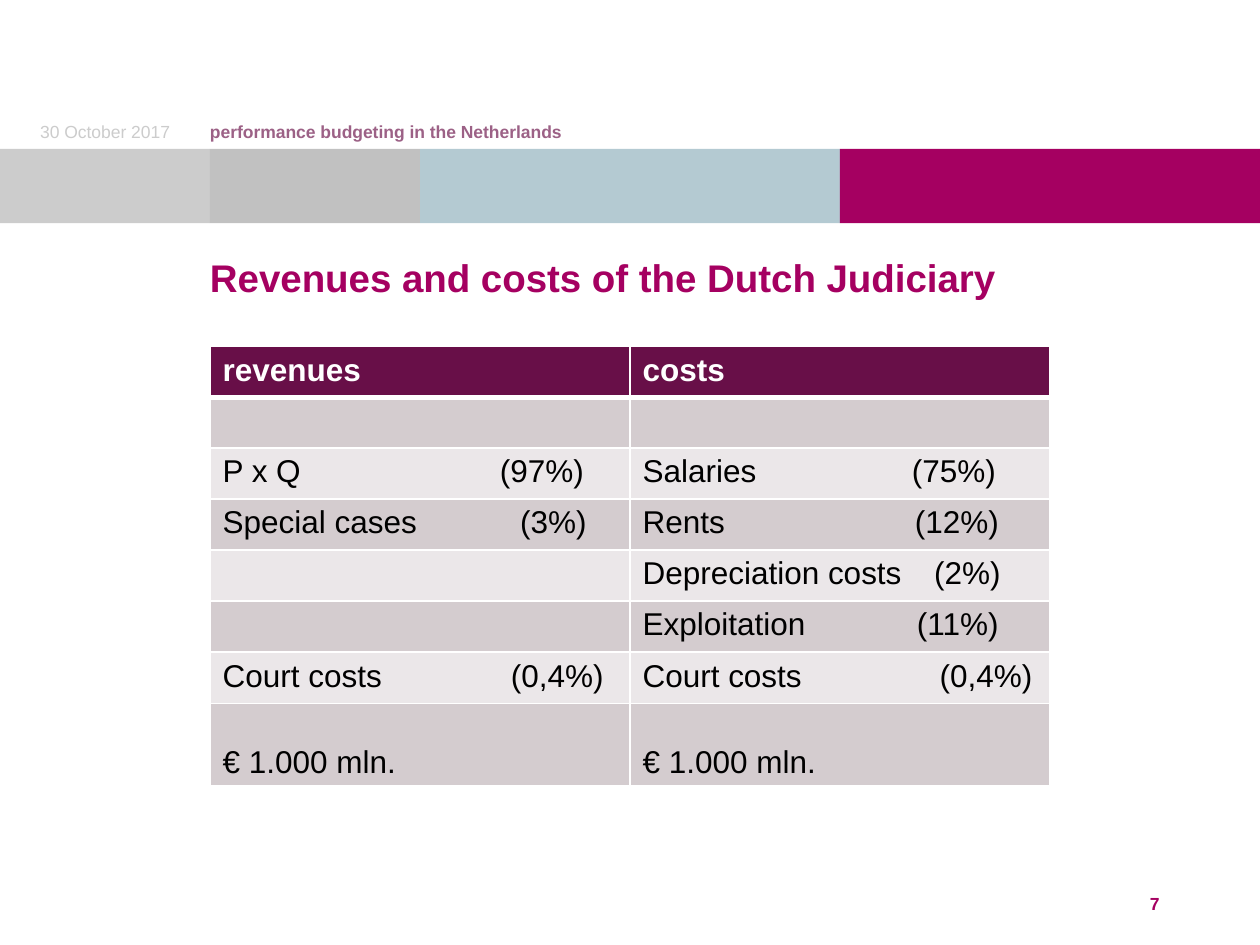
from lxml import etree
from pptx import Presentation
from pptx.dml.color import RGBColor
from pptx.enum.shapes import MSO_SHAPE
from pptx.enum.text import MSO_ANCHOR, PP_ALIGN
from pptx.oxml.ns import qn
from pptx.util import Cm, Pt

RECT = MSO_SHAPE.RECTANGLE
TOP, BASE = MSO_ANCHOR.TOP, MSO_ANCHOR.BOTTOM
LEFT, MID = PP_ALIGN.LEFT, PP_ALIGN.CENTER

WIDE, HIGH = 25.4, 19.05
COL = WIDE / 6
PLUM, WINE, GREY = "A50061", "680F48", "CCCCCC"
WHITE, BLACK = "FFFFFF", "000000"
BANDS = ("D4CCCF", "EBE7E9")

BARS = [(0, 1, GREY), (1, 1, "C1C1C1"), (2, 2, "B4CAD2"), (4, 2, PLUM)]
ROWS = [
    (1.02, "revenues", "costs"),
    (1, "", ""),
    (1.03, ("P x Q", "(97%)", 5.59), ("Salaries", "(75%)", 5.43)),
    (1.03, ("Special cases", "(3%)", 6), ("Rents", "(12%)", 5.49)),
    (1.03, "", ("Depreciation costs", "(2%)", 5.88)),
    (1.03, "", ("Exploitation", "(11%)", 5.53)),
    (1.03, ("Court costs", "(0,4%)", 5.81), ("Court costs", "(0,4%)", 5.99)),
    (1.67, "€ 1.000 mln.", "€ 1.000 mln."),
]


def rgb(code):
    return RGBColor.from_string(code)


def style(font, size, color, bold):
    form = {"name": "Arial", "size": Pt(size), "bold": bold}
    for key, value in form.items():
        setattr(font, key, value)
    font.color.rgb = rgb(color)


def add_bar(slide, start, span, color):
    bar = slide.shapes.add_shape(
        RECT, Cm(start * COL), Cm(3), Cm(span * COL), Cm(1.5))
    bar.shadow.inherit = False
    bar.fill.solid()
    bar.fill.fore_color.rgb = rgb(color)
    bar.line.fill.background()


def add_text(slide, area, text, size, color, bold, align=LEFT, anchor=TOP):
    frame = slide.shapes.add_textbox(*map(Cm, area)).text_frame
    form = {
        "word_wrap": True, "vertical_anchor": anchor,
        "margin_left": 0, "margin_right": 0,
        "margin_top": 0, "margin_bottom": 0,
    }
    for key, value in form.items():
        setattr(frame, key, value)
    para = frame.paragraphs[0]
    para.text = text
    para.alignment = align
    style(para.font, size, color, bold)


def add_edge(cell, side, width):
    props = cell._tc.get_or_add_tcPr()
    line = etree.SubElement(props, qn(f"a:ln{side}"), w=str(Pt(width)))
    fill = etree.SubElement(line, qn("a:solidFill"))
    etree.SubElement(fill, qn("a:srgbClr"), val=WHITE)


def add_tab(para, place):
    props = para._p.get_or_add_pPr()
    tabs = etree.SubElement(props, qn("a:tabLst"))
    etree.SubElement(tabs, qn("a:tab"), pos=str(Cm(place)), algn="l")


def fill_cell(cell, entry, row):
    head = row == 0
    widths = {"L": 1, "R": 1, "T": 3 if row == 1 else 1, "B": 3 if head else 1}
    for side, width in widths.items():
        add_edge(cell, side, width)
    cell.fill.solid()
    cell.fill.fore_color.rgb = rgb(WINE if head else BANDS[(row - 1) % 2])
    cell.vertical_anchor = BASE if row == len(ROWS) - 1 else TOP
    para = cell.text_frame.paragraphs[0]
    if isinstance(entry, tuple):
        label, share, place = entry
        add_tab(para, place)
        para.text = f"{label}\t{share}"
    else:
        para.text = entry
    style(para.font, 18, WHITE if head else BLACK, head)


def add_grid(slide):
    tall = sum(row[0] for row in ROWS)
    grid = slide.shapes.add_table(
        len(ROWS), 2, Cm(COL), Cm(6.99), Cm(4 * COL), Cm(tall)).table
    for column in grid.columns:
        column.width = Cm(2 * COL)
    for row, (height, *pair) in enumerate(ROWS):
        grid.rows[row].height = Cm(height)
        for col, entry in enumerate(pair):
            fill_cell(grid.cell(row, col), entry, row)


def main():
    deck = Presentation()
    deck.slide_width, deck.slide_height = Cm(WIDE), Cm(HIGH)
    slide = deck.slides.add_slide(deck.slide_layouts[6])
    for bar in BARS:
        add_bar(slide, *bar)
    add_text(slide, (COL, 5.13, 4 * COL, 1.85),
             "Revenues and costs of the Dutch Judiciary", 22, PLUM, True)
    add_grid(slide)
    add_text(slide, (0, 2.39, COL, 0.48), "30 October 2017",
             10, GREY, False, MID, BASE)
    add_text(slide, (COL, 2.39, 4 * COL, 0.48),
             "performance budgeting in the Netherlands",
             10, "9C6186", True, LEFT, BASE)
    add_text(slide, (22.78, 18.01, 1, 0.48), "7", 10, PLUM, True, MID)
    deck.save("out.pptx")


if __name__ == "__main__":
    main()
